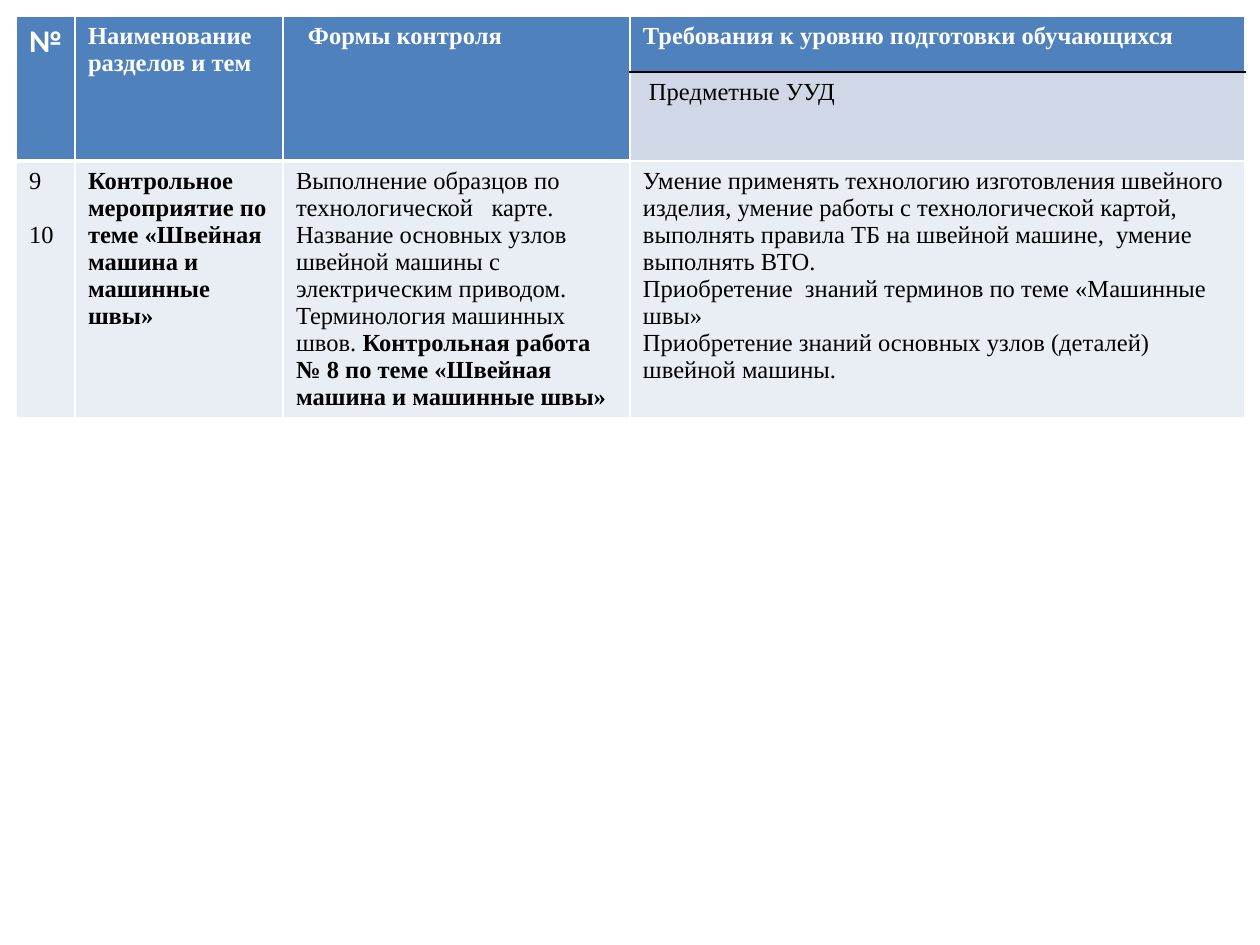
from dataclasses import dataclass

from lxml import etree
from pptx import Presentation
from pptx.dml.color import RGBColor
from pptx.oxml.ns import qn
from pptx.util import Emu, Pt

PX_PER_INCH = 126
WHITE = RGBColor(0xFF, 0xFF, 0xFF)
BLACK = RGBColor(0x00, 0x00, 0x00)
HEADER_BLUE = RGBColor(0x4F, 0x81, 0xBD)
SUBHEADER_BLUE = RGBColor(0xD0, 0xD8, 0xE8)
BODY_BLUE = RGBColor(0xE9, 0xED, 0xF4)
SERIF = "Times New Roman"

COLUMN_WIDTHS = (59, 208, 347, 615)
ROW_HEIGHTS = (56, 89, 256)


@dataclass(frozen=True)
class Span:
    text: str
    bold: bool = False


@dataclass(frozen=True)
class CellSpec:
    row: int
    column: int
    paragraphs: tuple[tuple[Span, ...], ...]
    fill: RGBColor = BODY_BLUE
    color: RGBColor = BLACK
    font: str = SERIF
    size: int = 14
    rows: int = 1
    margin: int = 13
    gap: float = 0
    top: tuple[RGBColor, int] = (WHITE, 1)
    bottom: tuple[RGBColor, int] = (WHITE, 1)


def px(value: int) -> Emu:
    return Emu(round(value * 914400 / PX_PER_INCH))


def header(column: int, text: str, **options) -> CellSpec:
    """A white bold heading on blue, two rows high unless told otherwise."""
    settings = {"rows": 2, "bottom": (WHITE, 3)} | options
    return CellSpec(0, column, ((Span(text, True),),),
                    HEADER_BLUE, WHITE, **settings)


CELLS = (
    # Header rows
    header(0, "№", font="Calibri", size=18),
    header(1, "Наименование разделов и тем"),
    header(2, "Формы контроля", margin=25),
    header(3, "Требования к уровню подготовки обучающихся",
           rows=1, bottom=(BLACK, 1)),
    CellSpec(1, 3, ((Span("Предметные УУД"),),), SUBHEADER_BLUE,
             margin=19, top=(BLACK, 1)),
    # Body row
    CellSpec(2, 0, ((Span("9"),), (Span("10"),)), gap=15.5, top=(WHITE, 3)),
    CellSpec(2, 1, ((Span("Контрольное мероприятие по теме «Швейная машина "
                          "и машинные швы»", True),),), top=(WHITE, 3)),
    CellSpec(2, 2, (
        (Span("Выполнение образцов по технологической   карте. Название "
              "основных узлов швейной машины с электрическим приводом."),),
        (Span("Терминология машинных швов. "),
         Span("Контрольная работа № 8 по теме «Швейная машина и машинные "
              "швы»", True)),
    ), top=(WHITE, 3)),
    CellSpec(2, 3, (
        (Span("Умение применять технологию изготовления швейного изделия, "
              "умение работы с технологической картой, выполнять правила ТБ "
              "на швейной машине,  умение выполнять ВТО."),),
        (Span("Приобретение  знаний терминов по теме «Машинные швы»"),),
        (Span("Приобретение знаний основных узлов (деталей) швейной "
              "машины."),),
    )),
)


def add_border(cell, side: str, color: RGBColor, width: int) -> None:
    properties = cell._tc.get_or_add_tcPr()
    line = etree.SubElement(properties, qn(f"a:ln{side}"), w=str(Pt(width)))
    solid = etree.SubElement(line, qn("a:solidFill"))
    etree.SubElement(solid, qn("a:srgbClr"), val=str(color))


def style_cell(cell, spec: CellSpec) -> None:
    for side, border in (("L", (WHITE, 1)), ("R", (WHITE, 1)),
                         ("T", spec.top), ("B", spec.bottom)):
        add_border(cell, side, *border)
    cell.fill.solid()
    cell.fill.fore_color.rgb = spec.fill


def write_text(cell, spec: CellSpec) -> None:
    cell.margin_left = px(spec.margin)
    frame = cell.text_frame
    for index, spans in enumerate(spec.paragraphs):
        para = frame.add_paragraph() if index else frame.paragraphs[0]
        if index and spec.gap:
            para.space_before = Pt(spec.gap)
        for span in spans:
            run = para.add_run()
            run.text = span.text
            run.font.name = spec.font
            run.font.size = Pt(spec.size)
            run.font.bold = span.bold
            run.font.color.rgb = spec.color


def add_plan_table(page) -> None:
    table = page.shapes.add_table(
        len(ROW_HEIGHTS), len(COLUMN_WIDTHS), px(16), px(16),
        px(sum(COLUMN_WIDTHS)), px(sum(ROW_HEIGHTS))).table
    for column, width in zip(table.columns, COLUMN_WIDTHS):
        column.width = px(width)
    for row, height in zip(table.rows, ROW_HEIGHTS):
        row.height = px(height)
    for spec in CELLS:
        cell = table.cell(spec.row, spec.column)
        last_row = spec.row + spec.rows - 1
        if spec.rows > 1:
            cell.merge(table.cell(last_row, spec.column))
        for row in range(spec.row, last_row + 1):
            style_cell(table.cell(row, spec.column), spec)
        write_text(cell, spec)


def main() -> None:
    deck = Presentation()
    deck.slide_width, deck.slide_height = px(1260), px(945)
    page = deck.slides.add_slide(deck.slide_layouts[6])
    add_plan_table(page)
    deck.save("out.pptx")


if __name__ == "__main__":
    main()
